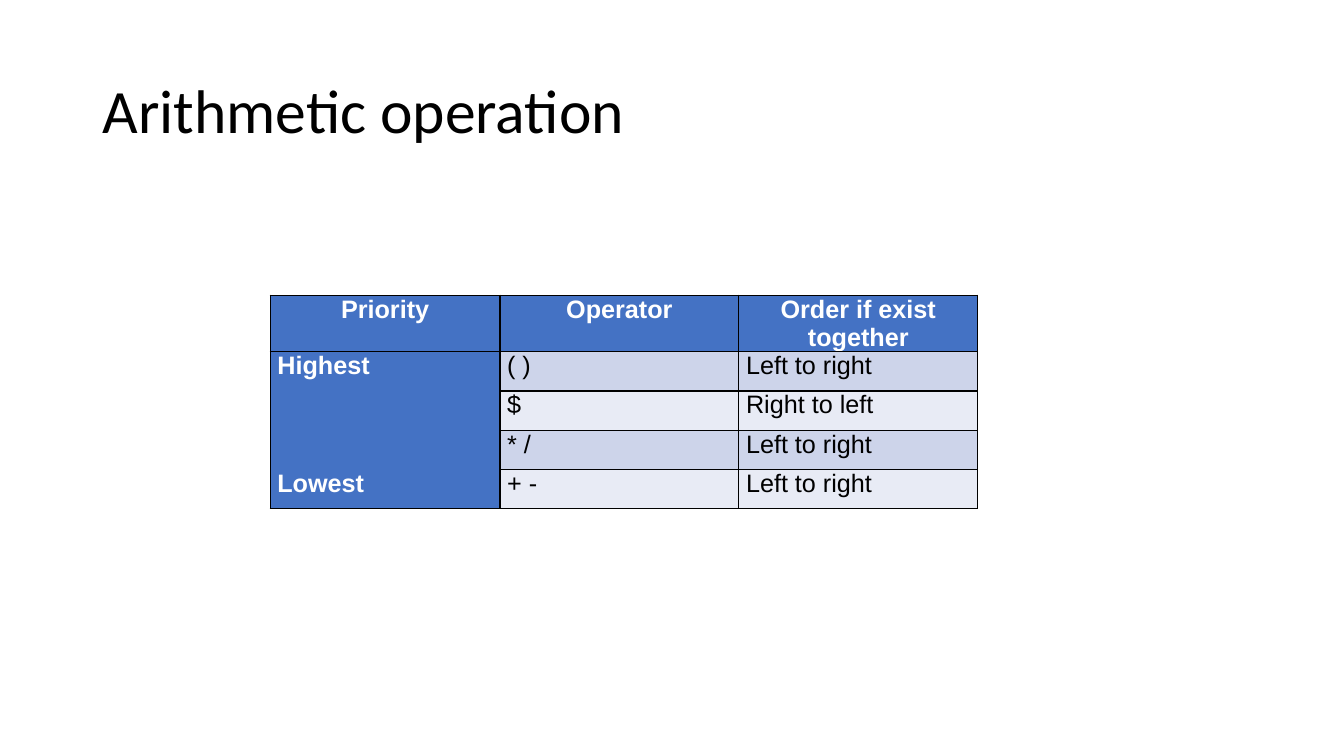
from lxml import etree
from pptx import Presentation
from pptx import util as u
from pptx.dml.color import RGBColor
from pptx.enum import text
from pptx.oxml.ns import qn

BLACK, WHITE, BLUE = "000000", "FFFFFF", "4472C4"
BANDS = ("CDD4EA", "E8EBF5")
PRIORITIES = [
    ("Priority", "Operator", "Order if exist together"),
    ("Highest", "( )", "Left to right"),
    ("", "$", "Right to left"),
    ("", "* /", "Left to right"),
    ("Lowest", "+ -", "Left to right"),
]


def colour(value):
    return RGBColor.from_string(value)


class OperatorSlide:
    """Build the title and priority table in one consistent style."""

    def __init__(self, deck):
        self.slide = deck.slides.add_slide(deck.slide_layouts[5])

    def set_words(self, frame, words, font, size, ink, align, bold=False):
        frame.text = words
        for paragraph in frame.paragraphs:
            paragraph.alignment = align
            paragraph.font.size = u.Pt(size)
            for run in paragraph.runs:
                run.font.name = font
                run.font.size = u.Pt(size)
                run.font.bold = bold
                run.font.color.rgb = colour(ink)

    def title(self, words):
        heading = self.slide.shapes.title
        heading.left, heading.top = u.Cm(2.33), u.Cm(1.01)
        heading.width, heading.height = u.Cm(29.21), u.Cm(3.68)
        frame = heading.text_frame
        self.set_words(frame, words, "Calibri", 44, BLACK, text.PP_ALIGN.LEFT)
        frame.vertical_anchor = text.MSO_ANCHOR.MIDDLE
        frame.word_wrap = True
        frame.paragraphs[0].line_spacing = 0.9

    def border(self, cell, side, visible):
        properties = cell._tc.get_or_add_tcPr()
        line = etree.SubElement(properties, qn(f"a:ln{side}"), w=str(u.Pt(1)))
        if visible:
            fill = etree.SubElement(line, qn("a:solidFill"))
            etree.SubElement(fill, qn("a:srgbClr"), val=BLACK)
        else:
            etree.SubElement(line, qn("a:noFill"))

    def table(self, rows, left, top, widths, row_height):
        frame = self.slide.shapes.add_table(
            len(rows), len(widths), u.Cm(left), u.Cm(top),
            u.Cm(sum(widths)), u.Cm(row_height * len(rows)))
        grid = frame.table
        for column, width in zip(grid.columns, widths):
            column.width = u.Cm(width)
        for row in grid.rows:
            row.height = u.Cm(row_height)
        last = len(rows) - 1
        for r, row in enumerate(rows):
            for c, words in enumerate(row):
                cell = grid.cell(r, c)
                heading = r == 0 or c == 0
                cell.margin_left = cell.margin_right = u.Cm(0.18)
                cell.margin_top = cell.margin_bottom = 0
                align = text.PP_ALIGN.CENTER if r == 0 else text.PP_ALIGN.LEFT
                self.set_words(cell.text_frame, words, "Arial", 18,
                               WHITE if heading else BLACK, align, heading)
                visible = {"L": True, "R": True,
                           "T": c > 0 or r < 2, "B": c > 0 or r in (0, last)}
                for side, shown in visible.items():
                    self.border(cell, side, shown)
                cell.fill.solid()
                cell.fill.fore_color.rgb = colour(
                    BLUE if heading else BANDS[(r - 1) % 2])


def main():
    deck = Presentation()
    deck.slide_width, deck.slide_height = u.Cm(33.87), u.Cm(19.05)
    page = OperatorSlide(deck)
    page.title("Arithmetic operation")
    page.table(PRIORITIES, 6.81, 7.44, (5.79, 6.02, 6.02), 0.99)
    deck.save("out.pptx")


if __name__ == "__main__":
    main()
